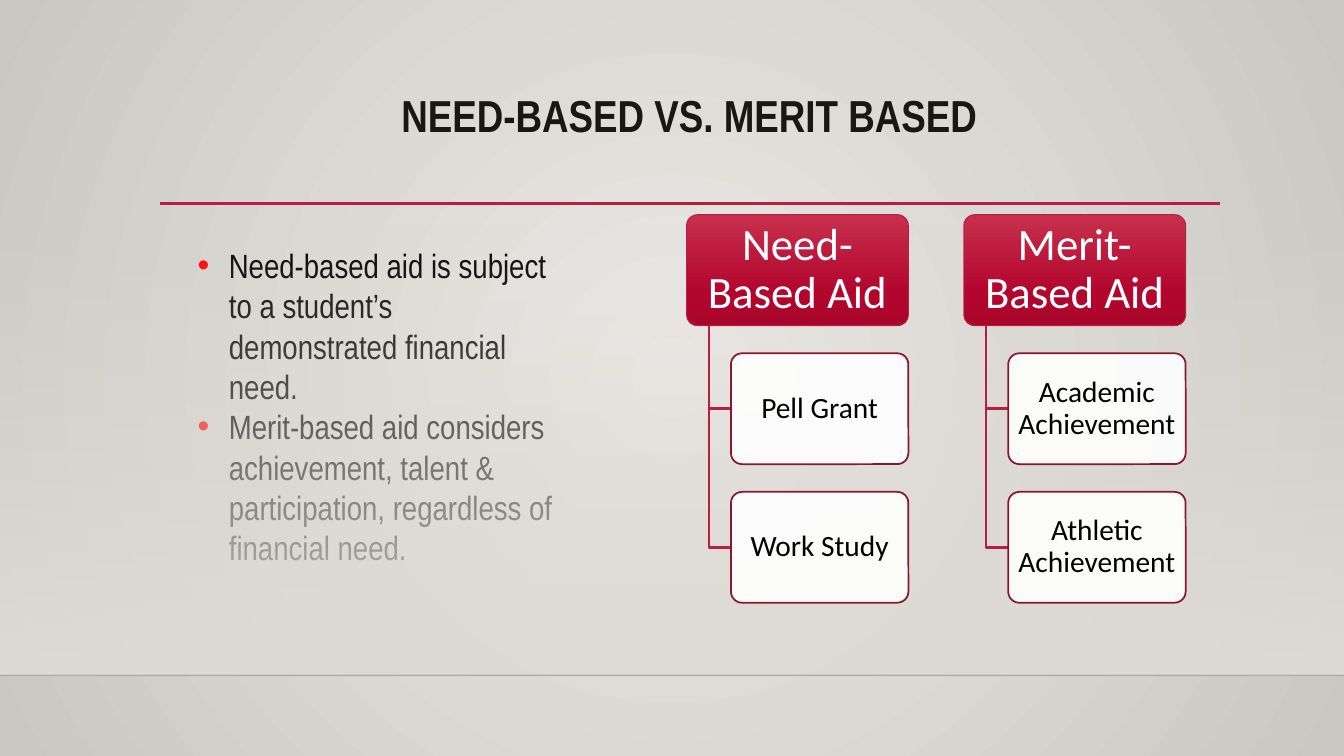
from dataclasses import dataclass

from lxml import etree
from pptx import Presentation
from pptx.dml.color import RGBColor
from pptx.enum.shapes import MSO_CONNECTOR, MSO_SHAPE
from pptx.enum.text import MSO_ANCHOR, MSO_AUTO_SIZE, PP_ALIGN
from pptx.oxml import parse_xml
from pptx.oxml.ns import nsdecls, qn
from pptx.util import Inches, Pt


@dataclass(frozen=True)
class Theme:
    heading_font: str = "Arial Narrow"
    diagram_font: str = "Calibri"
    accent: str = "B71E42"
    card_line: str = "891731"
    title: str = "191613"
    black: str = "000000"
    white: str = "FFFFFF"
    bullet: str = "FF0000"
    floor: str = "DFDBD5"
    floor_line: str = "000001"
    backdrop: tuple = ((0, "ECEAE7", 100), (100, "CAC7C1", 100))
    header: tuple = ((0, "C7304C", 100), (69, "B3062F", 100), (100, "AA062C", 100))
    large: int = 32
    body: int = 24
    small: int = 21


theme = Theme()
DOWNWARD = '<a:lin ang="5400000" scaled="0"/>'
CIRCULAR = '<a:path path="circle"><a:fillToRect l="50000" t="50000" r="50000" b="50000"/></a:path>'


def set_gradient(properties, stops, direction):
    stop_xml = "".join(
        f'<a:gs pos="{position * 1000}"><a:srgbClr val="{color}">'
        f'<a:alpha val="{opacity * 1000}"/></a:srgbClr></a:gs>'
        for position, color, opacity in stops
    )
    gradient = parse_xml(
        f'<a:gradFill {nsdecls("a")} rotWithShape="1"><a:gsLst>{stop_xml}</a:gsLst>{direction}</a:gradFill>'
    )
    properties.replace(properties.find(qn("a:solidFill")), gradient)


def add_text(paragraph, text, font_name, size, color, bold=False):
    run = paragraph.add_run()
    run.text = text
    run.font.name = font_name
    run.font.size = Pt(size)
    run.font.bold = bold
    run.font.color.rgb = RGBColor.from_string(color)


presentation = Presentation()
presentation.slide_width = Inches(13.33)
presentation.slide_height = Inches(7.5)
slide = presentation.slides.add_slide(presentation.slide_layouts[1])
shapes = slide.shapes
title, body = shapes.title, slide.placeholders[1]

slide.background.fill.solid()
set_gradient(slide.element.find(".//" + qn("p:bgPr")), theme.backdrop, CIRCULAR)

floor = shapes.add_shape(MSO_SHAPE.RECTANGLE, 0, Inches(2.21), Inches(13.33), Inches(4.49))
floor.shadow.inherit = False
floor.fill.solid()
set_gradient(floor.element.spPr, ((0, theme.floor, 0), (100, theme.floor, 100)), DOWNWARD)
floor.line.fill.background()

for left, right, top, color, width, opacity in (
    (0, 13.33, 6.7, theme.floor_line, 1, 20),
    (1.59, 12.1, 2.02, theme.accent, 2.5, 100),
):
    rule = shapes.add_connector(MSO_CONNECTOR.STRAIGHT, Inches(left), Inches(top), Inches(right), Inches(top))
    rule.line.width = Pt(width)
    rule.line.color.rgb = RGBColor.from_string(color)
    line_color = rule.element.spPr.find(".//" + qn("a:srgbClr"))
    etree.SubElement(line_color, qn("a:alpha")).set("val", str(opacity * 1000))
    etree.SubElement(rule.element.spPr, qn("a:effectLst"))

title.left, title.top, title.width, title.height = Inches(1.59), Inches(0.88), Inches(10.5), Inches(1.15)
title.text_frame.vertical_anchor = MSO_ANCHOR.TOP
title.text_frame.auto_size = MSO_AUTO_SIZE.NONE
paragraph = title.text_frame.paragraphs[0]
paragraph.alignment = PP_ALIGN.CENTER
paragraph.line_spacing = 0.9
add_text(paragraph, "NEED-BASED VS. MERIT BASED", theme.heading_font, theme.large, theme.title, True)

body.left, body.top, body.width, body.height = Inches(1.86), Inches(2.38), Inches(3.72), Inches(3.23)
body.text_frame.vertical_anchor = MSO_ANCHOR.TOP
body.text_frame.auto_size = MSO_AUTO_SIZE.NONE
for index, text in enumerate((
    "Need-based aid is subject to a student’s demonstrated financial need.",
    "Merit-based aid considers achievement, talent & participation, regardless of financial need.",
)):
    paragraph = body.text_frame.paragraphs[0] if index == 0 else body.text_frame.add_paragraph()
    paragraph.space_before = Pt(0)
    properties = paragraph._p.get_or_add_pPr()
    properties.set("marL", str(Inches(0.31)))
    properties.set("indent", str(-Inches(0.31)))
    bullet_color = etree.SubElement(properties, qn("a:buClr"))
    etree.SubElement(bullet_color, qn("a:srgbClr")).set("val", theme.bullet)
    etree.SubElement(properties, qn("a:buFont")).set("typeface", "Arial")
    etree.SubElement(properties, qn("a:buChar")).set("char", "•")
    add_text(paragraph, text, theme.heading_font, theme.body, theme.black)

COLUMN_LEFT, COLUMN_STEP = 6.81, 2.75
ROW_TOP, ROW_STEP = 2.13, 1.375
HEADER_WIDTH, CARD_HEIGHT = 2.2, 1.1
TRUNK_INDENT, CARD_INDENT = 0.22, 0.44

for column, labels in enumerate((
    ("Need-Based Aid", "Pell Grant", "Work Study"),
    ("Merit-Based Aid", "Academic Achievement", "Athletic Achievement"),
)):
    column_left = COLUMN_LEFT + column * COLUMN_STEP
    for row, label in enumerate(labels):
        is_header = row == 0
        indent = 0 if is_header else CARD_INDENT
        top = ROW_TOP + row * ROW_STEP
        if not is_header:
            trunk = column_left + TRUNK_INDENT
            middle = top + CARD_HEIGHT / 2
            builder = shapes.build_freeform(Inches(trunk), Inches(ROW_TOP + CARD_HEIGHT))
            builder.add_line_segments(
                [(Inches(trunk), Inches(middle)), (Inches(column_left + indent), Inches(middle))], close=False
            )
            branch = builder.convert_to_shape()
            branch.shadow.inherit = False
            branch.fill.background()
            branch.line.color.rgb = RGBColor.from_string(theme.accent)
            branch.line.width = Pt(1.75)

        card = shapes.add_shape(
            MSO_SHAPE.ROUNDED_RECTANGLE, Inches(column_left + indent), Inches(top),
            Inches(HEADER_WIDTH - indent), Inches(CARD_HEIGHT),
        )
        card.adjustments[0] = 0.1
        card.shadow.inherit = False
        card.fill.solid()
        if is_header:
            set_gradient(card.element.spPr, theme.header, DOWNWARD)
        else:
            card.fill.fore_color.rgb = RGBColor.from_string(theme.white)
            fill_color = card.element.spPr.find(qn("a:solidFill"))[0]
            etree.SubElement(fill_color, qn("a:alpha")).set("val", "90000")
        card.line.color.rgb = RGBColor.from_string(theme.accent if is_header else theme.card_line)
        card.line.width = Pt(0.75 if is_header else 1.25)

        frame = card.text_frame
        frame.word_wrap = True
        frame.vertical_anchor = MSO_ANCHOR.MIDDLE
        frame.margin_left = frame.margin_right = Inches(0.07 if is_header else 0.04)
        frame.margin_top = frame.margin_bottom = Inches(0.04 if is_header else 0.03)
        paragraph = frame.paragraphs[0]
        paragraph.alignment = PP_ALIGN.CENTER
        paragraph.line_spacing = 0.9
        add_text(
            paragraph, label, theme.diagram_font,
            theme.large if is_header else theme.small,
            theme.white if is_header else theme.black,
        )

presentation.save("out.pptx")
